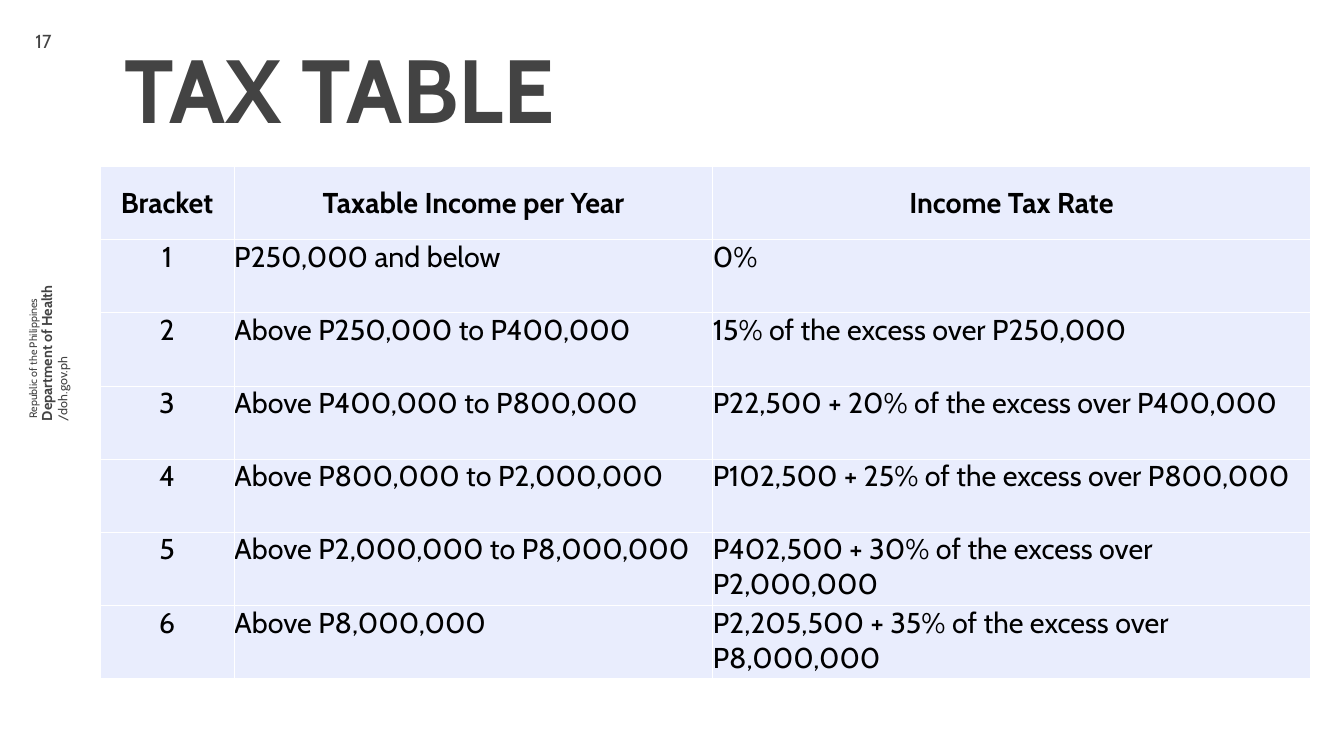
from lxml import etree
from pptx import Presentation
from pptx import util as u
from pptx.dml.color import RGBColor
from pptx.enum import text
from pptx.oxml.ns import qn

FONT = "Cabin"
GREY = "434343"
BLACK = "000000"
WHITE = "FFFFFF"
LAVENDER = "E9EDFD"
COLUMN_WIDTHS = [149.8, 534.2, 666.7]
ROW_HEIGHT = 81.65
HEADINGS = ("Bracket", "Taxable Income per Year", "Income Tax Rate")
BRACKETS = [
    ("P250,000 and below", "0%"),
    ("Above P250,000 to P400,000", "15% of the excess over P250,000"),
    ("Above P400,000 to P800,000", "P22,500 + 20% of the excess over P400,000"),
    ("Above P800,000 to P2,000,000", "P102,500 + 25% of the excess over P800,000"),
    ("Above P2,000,000 to P8,000,000", "P402,500 + 30% of the excess over P2,000,000"),
    ("Above P8,000,000", "P2,205,500 + 35% of the excess over P8,000,000"),
]
SIDE_LABELS = [
    ("Department of Health", -50.4, 377.3, 33.8, 16, True, text.PP_ALIGN.CENTER),
    ("/doh.gov.ph", -32.4, 359.3, 31.7, 14, False, text.PP_ALIGN.LEFT),
    ("Republic of the Philippines", -65.5, 385.9, 28.8, 12, False, text.PP_ALIGN.CENTER),
]


def color(value):
    return RGBColor.from_string(value)


def set_margins(target, inset):
    target.margin_left = target.margin_right = u.Pt(inset)
    target.margin_top = target.margin_bottom = u.Pt(inset)


def write(frame, words, size, shade, bold=False, align=text.PP_ALIGN.LEFT):
    frame.text = words
    para = frame.paragraphs[0]
    para.alignment = align
    para.font.name = FONT
    para.font.size = u.Pt(size)
    para.font.bold = bold
    para.font.color.rgb = color(shade)
    return para


def set_frame(frame, inset, anchor=text.MSO_ANCHOR.TOP):
    frame.word_wrap = True
    frame.auto_size = text.MSO_AUTO_SIZE.NONE
    frame.vertical_anchor = anchor
    set_margins(frame, inset)


def add_side_label(page, words, left, top, height, size, bold, align):
    box = page.shapes.add_textbox(u.Pt(left), u.Pt(top), u.Pt(204.5), u.Pt(height))
    box.rotation = 270
    set_frame(box.text_frame, 7.2)
    write(box.text_frame, words, size, GREY, bold, align)


def add_page_number(page, number):
    box = page.shapes.add_textbox(u.Pt(24.5), u.Pt(13.7), u.Pt(54), u.Pt(64.8))
    set_frame(box.text_frame, 15, text.MSO_ANCHOR.MIDDLE)
    write(box.text_frame, number, 21, GREY)


def format_title(page, words):
    title = page.shapes.title
    title.left, title.top = u.Pt(123.8), u.Pt(46.1)
    title.width, title.height = u.Pt(1016), u.Pt(206)
    set_frame(title.text_frame, 15)
    write(title.text_frame, words, 100, GREY, True).line_spacing = 0.8


def set_borders(cell, shade):
    properties = cell._tc.get_or_add_tcPr()
    for position, side in enumerate(("a:lnL", "a:lnR", "a:lnT", "a:lnB")):
        line = etree.Element(qn(side), w=str(u.Pt(1)))
        fill = etree.SubElement(line, qn("a:solidFill"))
        etree.SubElement(fill, qn("a:srgbClr"), val=shade)
        properties.insert(position, line)


def format_cell(cell, words, heading, centred):
    cell.fill.solid()
    cell.fill.fore_color.rgb = color(LAVENDER)
    set_borders(cell, WHITE)
    set_margins(cell, 0)
    cell.vertical_anchor = text.MSO_ANCHOR.MIDDLE if heading else text.MSO_ANCHOR.TOP
    align = text.PP_ALIGN.CENTER if centred else text.PP_ALIGN.LEFT
    write(cell.text_frame, words, 32, BLACK, heading, align)


def add_tax_table(page):
    rows = [HEADINGS]
    rows += [(str(number), *bracket) for number, bracket in enumerate(BRACKETS, 1)]
    table = page.shapes.add_table(
        len(rows), len(HEADINGS), u.Pt(111.6), u.Pt(185.8),
        u.Pt(sum(COLUMN_WIDTHS)), u.Pt(ROW_HEIGHT * len(rows))).table
    for column, width in zip(table.columns, COLUMN_WIDTHS):
        column.width = u.Pt(width)
    for r, values in enumerate(rows):
        table.rows[r].height = u.Pt(ROW_HEIGHT)
        for c, words in enumerate(values):
            format_cell(table.cell(r, c), words, r == 0, r == 0 or c == 0)


def main():
    deck = Presentation()
    deck.slide_width, deck.slide_height = u.Pt(1500), u.Pt(843.75)
    page = deck.slides.add_slide(deck.slide_layouts.get_by_name("Title Only"))
    page.background.fill.solid()
    page.background.fill.fore_color.rgb = color(WHITE)
    for label in SIDE_LABELS:
        add_side_label(page, *label)
    add_page_number(page, "17")
    format_title(page, "TAX TABLE")
    add_tax_table(page)
    deck.save("out.pptx")


if __name__ == "__main__":
    main()
